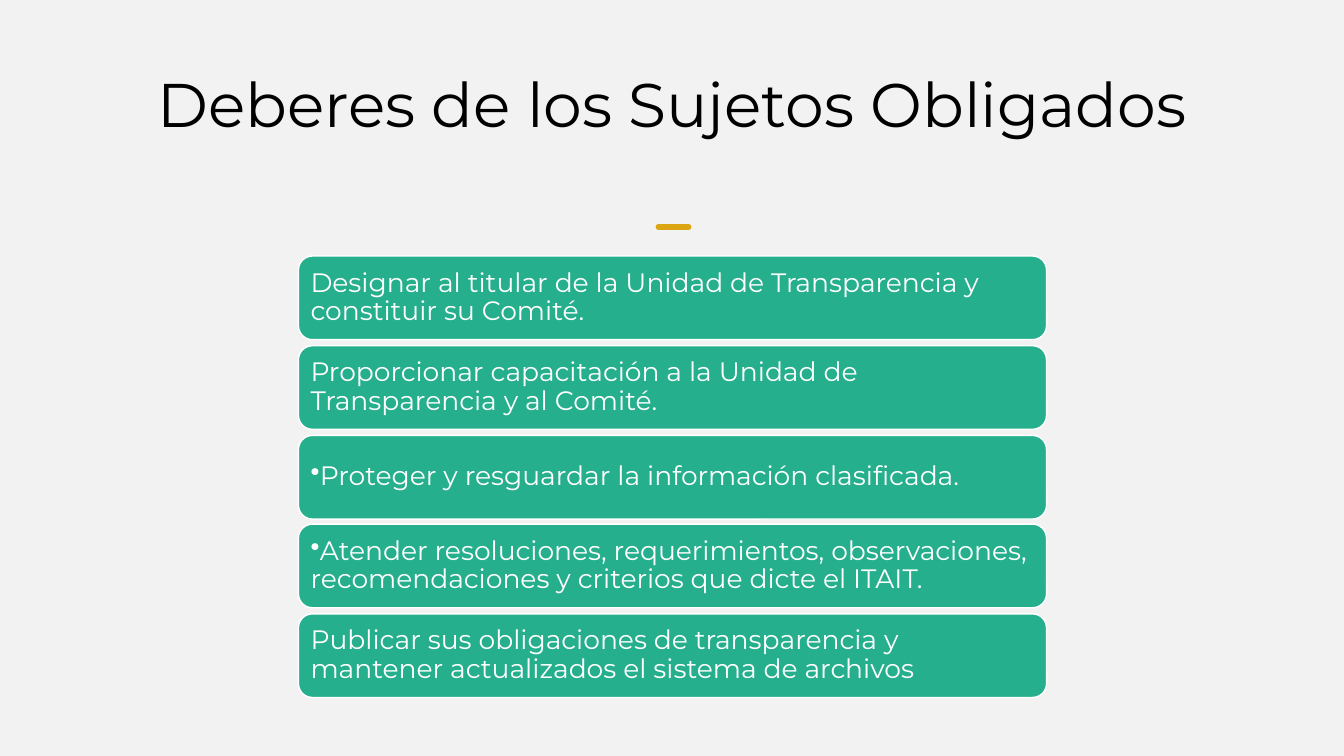
from dataclasses import dataclass

from lxml.etree import SubElement
from pptx import Presentation
from pptx.dml.color import RGBColor
from pptx.enum.shapes import MSO_CONNECTOR, MSO_SHAPE
from pptx.enum.text import MSO_ANCHOR, MSO_AUTO_SIZE, PP_ALIGN
from pptx.oxml.ns import qn
from pptx.util import Emu, Pt

EMU_PER_PX = 9144


@dataclass(frozen=True)
class Theme:
    font: str = "Montserrat"
    background: RGBColor = RGBColor(0xF2, 0xF2, 0xF2)
    title: RGBColor = RGBColor(0x00, 0x00, 0x00)
    accent: RGBColor = RGBColor(0xDB, 0xA5, 0x14)
    card: RGBColor = RGBColor(0x26, 0xAF, 0x8D)
    card_text: RGBColor = RGBColor(0xFF, 0xFF, 0xFF)
    title_size: Pt = Pt(44)
    card_size: Pt = Pt(19)
    accent_width: Pt = Pt(4)
    card_border: Pt = Pt(1)


THEME = Theme()
DUTIES = [
    ("Designar al titular de la Unidad de Transparencia y constituir su Comité.", False),
    ("Proporcionar capacitación a la Unidad de Transparencia y al Comité.", False),
    ("Proteger y resguardar la información clasificada.", True),
    ("Atender resoluciones, requerimientos, observaciones, recomendaciones y criterios que dicte el ITAIT.", True),
    ("Publicar sus obligaciones de transparencia y mantener actualizados el sistema de archivos", False),
]
CARD_LEFT, CARD_TOP, CARD_WIDTH, CARD_HEIGHT = 296, 254, 742, 83
CARD_PITCH = 88.75
CARD_INSET = 8


def px(length):
    return Emu(length * EMU_PER_PX)


def set_format(target, values):
    for name, value in values.items():
        setattr(target, name, value)


def write_text(shape, text, size, color, align, inset):
    frame = shape.text_frame
    margins = {f"margin_{side}": px(inset) for side in ("left", "top", "right", "bottom")}
    set_format(frame, {
        "word_wrap": True,
        "auto_size": MSO_AUTO_SIZE.NONE,
        "vertical_anchor": MSO_ANCHOR.MIDDLE,
        **margins,
    })
    para = frame.paragraphs[0]
    set_format(para, {"alignment": align, "line_spacing": 0.9})
    span = para.add_run()
    span.text = text
    set_format(span.font, {"name": THEME.font, "size": size})
    span.font.color.rgb = color
    return para


def add_bullet(para):
    properties = para._p.get_or_add_pPr()
    properties.set("marL", "0")
    properties.set("indent", "0")
    SubElement(properties, qn("a:buChar")).set("char", "•")


def add_title(page, text):
    title = page.shapes.title
    set_format(title, {"left": px(92), "top": px(40), "width": px(1150), "height": px(134)})
    write_text(title, text, THEME.title_size, THEME.title, PP_ALIGN.CENTER, 5)


def add_accent(page):
    accent = page.shapes.add_connector(
        MSO_CONNECTOR.STRAIGHT, px(653), px(225), px(683), px(225))
    accent.line.color.rgb = THEME.accent
    accent.line.width = THEME.accent_width
    accent.line._get_or_add_ln().set("cap", "rnd")
    SubElement(accent._element.spPr, qn("a:effectLst"))


def add_card(page, top, text, bulleted):
    card = page.shapes.add_shape(
        MSO_SHAPE.ROUNDED_RECTANGLE, px(CARD_LEFT), px(top), px(CARD_WIDTH), px(CARD_HEIGHT))
    card.shadow.inherit = False
    card.fill.solid()
    card.fill.fore_color.rgb = THEME.card
    card.line.color.rgb = THEME.card_text
    card.line.width = THEME.card_border
    para = write_text(card, text, THEME.card_size, THEME.card_text, PP_ALIGN.LEFT, CARD_INSET)
    if bulleted:
        add_bullet(para)


def main():
    deck = Presentation()
    set_format(deck, {"slide_width": px(1333), "slide_height": px(750)})
    page = deck.slides.add_slide(deck.slide_layouts[5])
    page.background.fill.solid()
    page.background.fill.fore_color.rgb = THEME.background
    add_title(page, "Deberes de los Sujetos Obligados")
    add_accent(page)
    for index, (text, bulleted) in enumerate(DUTIES):
        add_card(page, CARD_TOP + round(index * CARD_PITCH), text, bulleted)
    deck.save("out.pptx")


if __name__ == "__main__":
    main()
